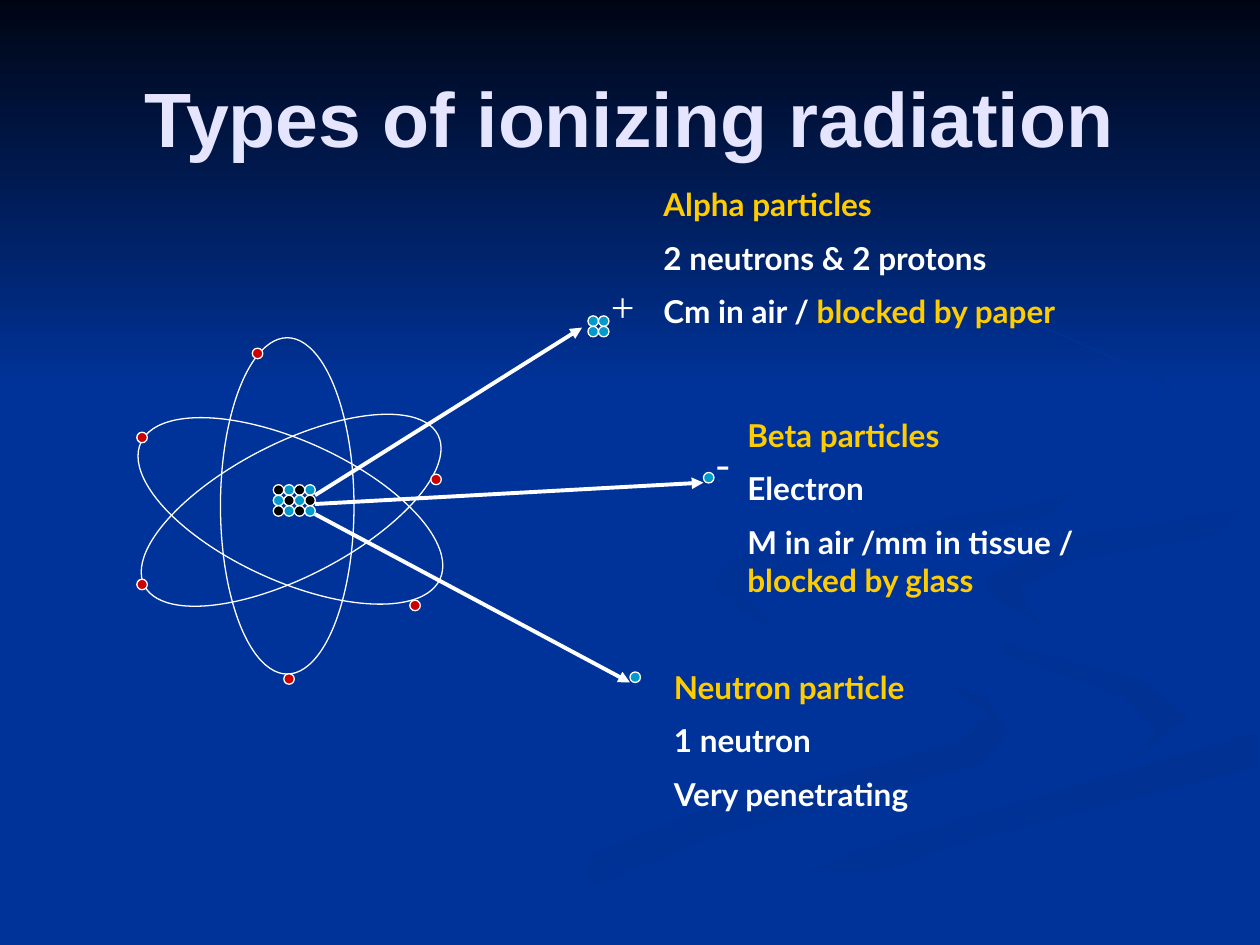
from lxml import etree
from pptx import Presentation
from pptx.dml.color import RGBColor
from pptx.enum.shapes import MSO_CONNECTOR, MSO_SHAPE
from pptx.enum.text import MSO_ANCHOR, PP_ALIGN
from pptx.oxml.ns import qn
from pptx.util import Pt

OVAL = MSO_SHAPE.OVAL
PARTICLE = MSO_SHAPE.FLOWCHART_CONNECTOR
STRAIGHT = MSO_CONNECTOR.STRAIGHT
MIDDLE, TOP = MSO_ANCHOR.MIDDLE, MSO_ANCHOR.TOP
CENTER, LEFT = PP_ALIGN.CENTER, PP_ALIGN.LEFT

NAVY, NIGHT, SHADE = "003399", "000514", "003193"
WHITE, BLACK, YELLOW = "FFFFFF", "000000", "FFCC00"
LAVENDER, BLUE, RED = "E5E5FF", "0099CC", "CC0000"
DOT = 6

# Background ribbons: start colour, end colour, clockwise angle, outline
RIBBONS = [
    (NAVY, SHADE, 0, [
        (562, 398), (442, 357), (414, 330), (422, 351), (541, 391), (566, 408),
        (546, 425), (388, 467), (216, 539), (260, 539), (406, 479), (562, 436),
        (576, 418)]),
    (NAVY, SHADE, 45, [
        (679, 410), (652, 389), (557, 362), (521, 334), (544, 364), (642, 398),
        (661, 418), (644, 436)]),
    (SHADE, NAVY, 90, [
        (362, 539), (411, 539), (541, 484), (719, 438), (719, 418), (501, 482)]),
    (SHADE, NAVY, 45, [
        (562, 331), (570, 344), (595, 357), (582, 336), (618, 319), (719, 302),
        (719, 289), (611, 307)]),
    (SHADE, NAVY, 45, [
        (500, 312), (655, 285), (691, 253), (664, 216), (572, 176), (662, 217),
        (684, 256), (598, 286), (422, 317), (404, 334), (445, 360), (419, 339)]),
]

# Orbits: left, top, width, height, rotation
ORBITS = [
    (128.2, 197.3, 76.3, 188.6, 62.8),
    (126, 198, 79.9, 187.9, 294.5),
    (126, 193, 76.3, 192.2, 0),
]
ELECTRONS = [(78.2, 247), (78.2, 331), (162.2, 385), (234.2, 343),
             (246.2, 271), (144.2, 199)]
NUCLEUS_EDGE = 180
# Rays: height at the nucleus, tip
RAYS = [(283, (332.6, 187.2)), (288, (402, 275.8)), (293.8, (360, 390))]

# Clusters of particles: left, top, columns, rows, alternating colours
CLUSTERS = [
    (156.2, 277, 4, 3, (BLACK, BLUE)),
    (336, 180.5, 2, 2, (BLUE, BLUE)),
    (402, 270, 1, 1, (BLUE, BLUE)),
    (360, 384, 1, 1, (BLUE, BLUE)),
]
CHARGES = [("+", 342, 157), ("-", 402, 246.2)]

# Descriptions: box, then paragraphs of (text, colour) runs
DESCRIPTIONS = [
    ((372, 102.2, 300, 94.3), [
        [("Alpha particles", YELLOW)],
        [("2 neutrons & 2 protons", WHITE)],
        [("Cm in air / ", WHITE), ("blocked by paper", YELLOW)]]),
    ((420, 234, 258, 116), [
        [("Beta particles", YELLOW)],
        [("Electron", WHITE)],
        [("M in air /mm in tissue / ", WHITE), ("blocked by glass", YELLOW)]]),
    ((378, 378, 204, 94.3), [
        [("Neutron particle", YELLOW)],
        [("1 neutron", WHITE)],
        [("Very penetrating", WHITE)]]),
]


def rgb(hex_color):
    return RGBColor.from_string(hex_color)


def fade(shape, start, end, clockwise):
    """Fill a shape with a two-colour linear gradient and no outline."""
    shape.shadow.inherit = False
    shape.line.fill.background()
    shape.fill.gradient()
    shape.fill.gradient_angle = (360 - clockwise) % 360
    for position, (stop, color) in enumerate(zip(shape.fill.gradient_stops, (start, end))):
        stop.color.rgb = rgb(color)
        stop.position = position


def add_ribbon(slide, start, end, clockwise, outline):
    corners = [(Pt(x), Pt(y)) for x, y in outline]
    builder = slide.shapes.build_freeform(*corners[0])
    builder.add_line_segments(corners[1:], close=True)
    fade(builder.convert_to_shape(), start, end, clockwise)


def add_round(slide, kind, left, top, width, height, fill=None, rotation=0):
    """Add a white-outlined ellipse or particle, hollow when fill is None."""
    shape = slide.shapes.add_shape(kind, Pt(left), Pt(top), Pt(width), Pt(height))
    shape.shadow.inherit = False
    shape.rotation = rotation
    shape.line.color.rgb = rgb(WHITE)
    shape.line.width = Pt(0.75)
    if fill:
        shape.fill.solid()
        shape.fill.fore_color.rgb = rgb(fill)
    else:
        shape.fill.background()


def add_particle(slide, left, top, color):
    add_round(slide, PARTICLE, left, top, DOT, DOT, color)


def add_cluster(slide, left, top, columns, rows, colors):
    """Pack particles in a grid, coloured like a checkerboard."""
    for row in range(rows):
        for column in range(columns):
            add_particle(slide, left + column * DOT, top + row * DOT,
                         colors[(row + column) % 2])


def add_arrow(slide, start, end):
    arrow = slide.shapes.add_connector(STRAIGHT, *map(Pt, start + end))
    arrow.line.color.rgb = rgb(WHITE)
    arrow.line.width = Pt(2.25)
    outline = arrow._element.spPr.find(qn("a:ln"))
    etree.SubElement(outline, qn("a:tailEnd"), type="triangle")
    etree.SubElement(arrow._element.spPr, qn("a:effectLst"))


def add_text(slide, box, paragraphs, font, size, bold=False, align=LEFT,
             anchor=TOP, space_before=0):
    frame = slide.shapes.add_textbox(*map(Pt, box)).text_frame
    frame.word_wrap = True
    frame.vertical_anchor = anchor
    for index, runs in enumerate(paragraphs):
        paragraph = frame.add_paragraph() if index else frame.paragraphs[0]
        paragraph.alignment = align
        paragraph.space_before = Pt(space_before)
        for text, color in runs:
            run = paragraph.add_run()
            run.text = text
            run.font.name = font
            run.font.size = Pt(size)
            run.font.bold = bold
            run.font.color.rgb = rgb(color)


def add_backdrop(slide):
    slide.background.fill.solid()
    slide.background.fill.fore_color.rgb = rgb(NAVY)
    sky = slide.shapes.add_shape(MSO_SHAPE.RECTANGLE, 0, 0, Pt(720), Pt(222))
    fade(sky, NIGHT, NAVY, 90)
    for ribbon in RIBBONS:
        add_ribbon(slide, *ribbon)


def main():
    deck = Presentation()
    deck.slide_width, deck.slide_height = Pt(720), Pt(540)
    slide = deck.slides.add_slide(deck.slide_layouts[6])
    add_backdrop(slide)
    add_text(slide, (36, 21.6, 648, 90), [[("Types of ionizing radiation", LAVENDER)]],
             "Arial", 44, bold=True, align=CENTER, anchor=MIDDLE)
    for *box, rotation in ORBITS:
        add_round(slide, OVAL, *box, rotation=rotation)
    for height, tip in RAYS:
        add_arrow(slide, (NUCLEUS_EDGE, height), tip)
    for cluster in CLUSTERS:
        add_cluster(slide, *cluster)
    for left, top in ELECTRONS:
        add_particle(slide, left, top, RED)
    for sign, left, top in CHARGES:
        add_text(slide, (left, top, 18, 36), [[(sign, WHITE)]],
                 "Times New Roman", 24, space_before=12)
    for box, paragraphs in DESCRIPTIONS:
        add_text(slide, box, paragraphs, "Lato", 18, bold=True, space_before=9)
    deck.save("out.pptx")


if __name__ == "__main__":
    main()
